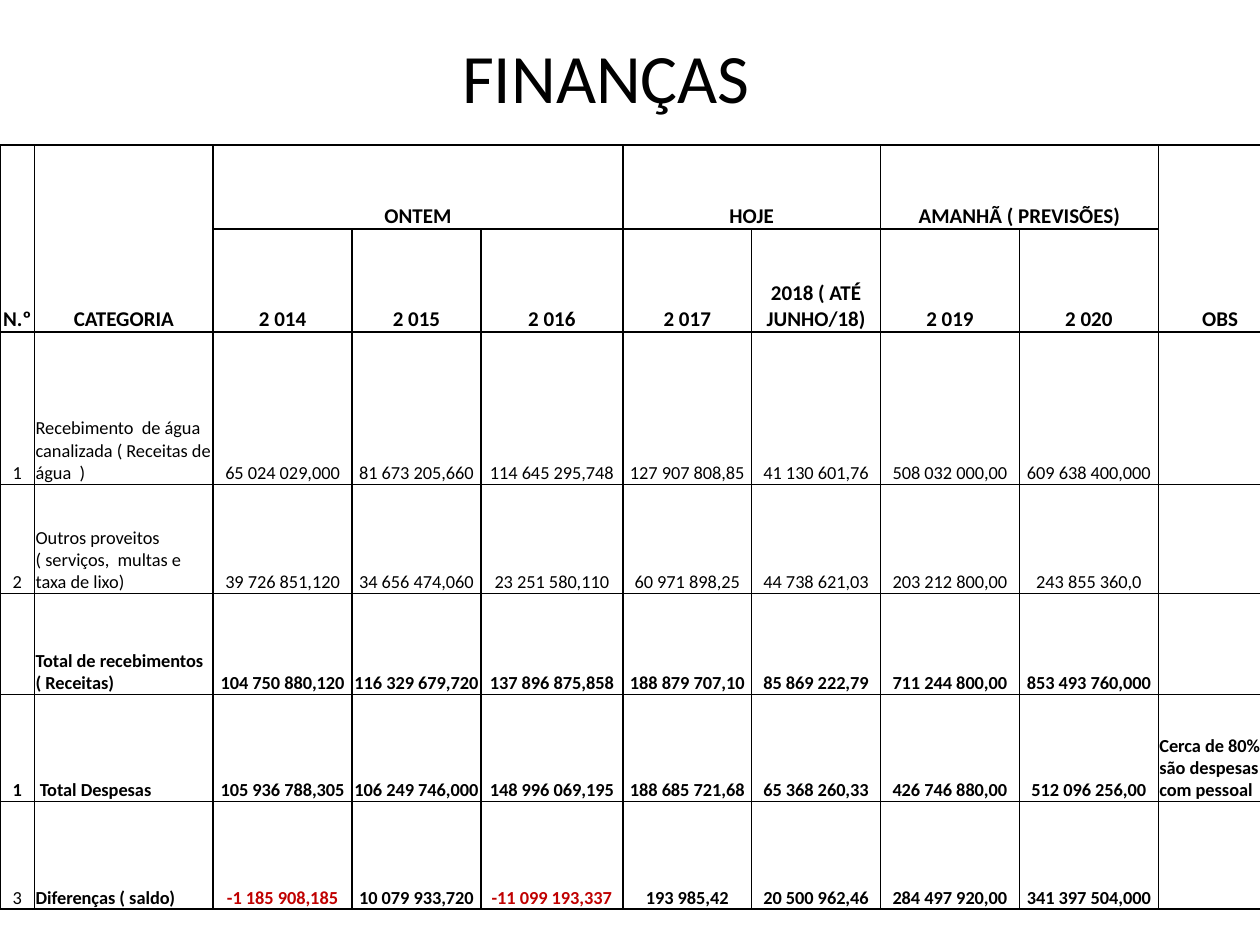
from lxml import etree
from pptx import Presentation
from pptx.dml import color
from pptx.enum import text
from pptx.oxml import ns
from pptx.util import Pt

BLACK, RED = "000000", "C00000"


def paint(target, value):
    """Colour a font from a hex string."""
    target.color.rgb = color.RGBColor.from_string(value)


def border(cell):
    """Draw a black 1 pt line on all four sides of a cell."""
    props = cell._tc.get_or_add_tcPr()
    for place, side in enumerate(("lnL", "lnR", "lnT", "lnB")):
        line = etree.Element(ns.qn("a:" + side), w=str(Pt(1)))
        fill = etree.SubElement(line, ns.qn("a:solidFill"))
        etree.SubElement(fill, ns.qn("a:srgbClr"), val=BLACK)
        props.insert(place, line)


deck = Presentation()
deck.slide_width, deck.slide_height = Pt(720), Pt(540)
page = deck.slides.add_slide(deck.slide_layouts[6])

# Title
box = page.shapes.add_textbox(Pt(8.64), Pt(21.6), Pt(675.36), Pt(43.92))
box.text_frame.word_wrap = True
box.text_frame.vertical_anchor = text.MSO_ANCHOR.MIDDLE
para = box.text_frame.paragraphs[0]
para.text = "FINANÇAS"
para.alignment = text.PP_ALIGN.CENTER
para.font.name, para.font.size = "Calibri", Pt(39.6)
paint(para.font, BLACK)

# Table contents: two header rows, then one row per category
rows = [
    ["N.º", "CATEGORIA", "ONTEM", "", "", "HOJE", "", "AMANHÃ ( PREVISÕES)", "", "OBS"],
    ["", "", "2 014", "2 015", "2 016", "2 017", "2018 ( ATÉ JUNHO/18)",
     "2 019", "2 020", ""],
    ["1", "Recebimento  de água canalizada ( Receitas de água  )",
     "65 024 029,000", "81 673 205,660", "114 645 295,748", "127 907 808,85",
     "41 130 601,76", "508 032 000,00", "609 638 400,000", ""],
    ["2", "Outros proveitos  ( serviços,  multas e taxa de lixo)",
     "39 726 851,120", "34 656 474,060", "23 251 580,110", "60 971 898,25",
     "44 738 621,03", "203 212 800,00", "243 855 360,0", ""],
    ["", "Total de recebimentos ( Receitas)",
     "104 750 880,120", "116 329 679,720", "137 896 875,858", "188 879 707,10",
     "85 869 222,79", "711 244 800,00", "853 493 760,000", ""],
    ["1", " Total Despesas",
     "105 936 788,305", "106 249 746,000", "148 996 069,195", "188 685 721,68",
     "65 368 260,33", "426 746 880,00", "512 096 256,00",
     "Cerca de 80% são despesas com pessoal"],
    ["3", "Diferenças ( saldo)",
     "-1 185 908,185", "10 079 933,720", "-11 099 193,337", "193 985,42",
     "20 500 962,46", "284 497 920,00", "341 397 504,000", ""],
]
widths = [19.8, 102, 79.4, 73.6, 81.2, 73.6, 73.6, 79.4, 79.4, 70.6]
heights = [48, 59, 87, 62.4, 57.6, 61.2, 61.4]
merges = [((0, 0), (1, 0)), ((0, 1), (1, 1)), ((0, 2), (0, 4)),
          ((0, 5), (0, 6)), ((0, 7), (0, 8)), ((0, 9), (1, 9))]

# Table grid
frame = page.shapes.add_table(len(rows), len(widths), Pt(0), Pt(82.8),
                              Pt(sum(widths)), Pt(sum(heights)))
table = frame.table
table.first_row = table.horz_banding = False
for column, width in zip(table.columns, widths):
    column.width = Pt(width)
for row, height in zip(table.rows, heights):
    row.height = Pt(height)

# Cell text and format
for r, values in enumerate(rows):
    header = r < 2
    for c, value in enumerate(values):
        cell = table.cell(r, c)
        cell.fill.background()
        border(cell)
        cell.vertical_anchor = text.MSO_ANCHOR.BOTTOM
        cell.margin_left = cell.margin_right = cell.margin_top = Pt(0.6)
        cell.margin_bottom = Pt(0)
        para = cell.text_frame.paragraphs[0]
        para.text = value
        left = not header and c in (1, 9)
        para.alignment = text.PP_ALIGN.LEFT if left else text.PP_ALIGN.CENTER
        para.font.name = "Calibri"
        para.font.size = Pt(12 if header else 10.5)
        para.font.bold = header or (r >= 4 and (r, c) != (6, 0))
        paint(para.font, RED if value.startswith("-") else BLACK)

# Joined header cells
for first, last in merges:
    table.cell(*first).merge(table.cell(*last))

deck.save("out.pptx")
